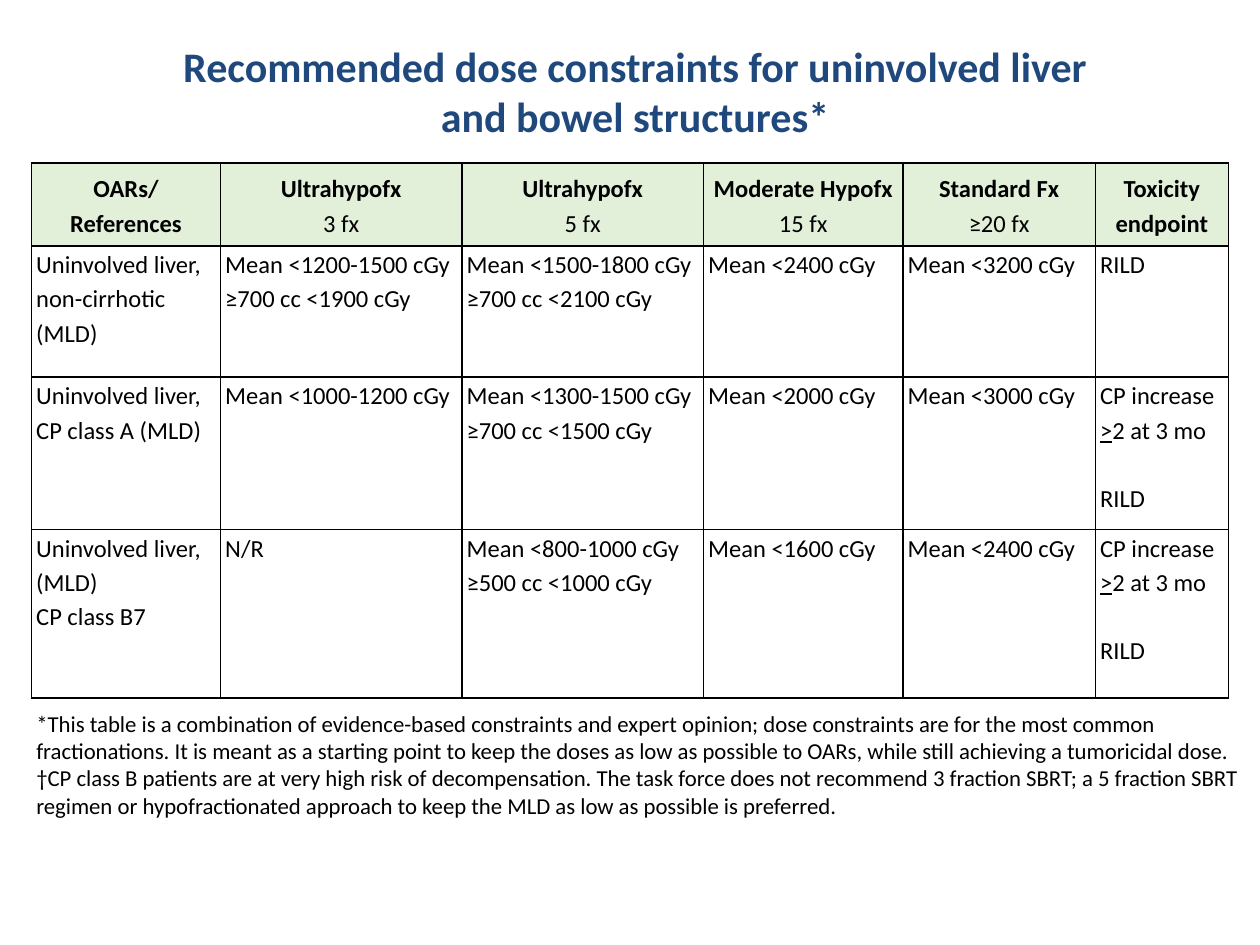
from lxml.etree import SubElement
from pptx import Presentation
from pptx.dml.color import RGBColor
from pptx.enum.text import MSO_ANCHOR, MSO_AUTO_SIZE, PP_ALIGN
from pptx.oxml.ns import qn
from pptx.util import Pt

NAVY = RGBColor(0x1F, 0x49, 0x7D)
GREEN = RGBColor(0xE2, 0xEF, 0xD9)
BLACK = RGBColor(0, 0, 0)
FONT = "Calibri"

TITLE = "Recommended dose constraints for uninvolved liver\vand bowel structures*"
HEADS = [
    ["OARs/", "References"],
    ["Ultrahypofx", "3 fx"],
    ["Ultrahypofx", "5 fx"],
    ["Moderate Hypofx", "15 fx"],
    ["Standard Fx", "≥20 fx"],
    ["Toxicity endpoint"],
]
RISK = [("CP increase ", ">", "2 at 3 mo"), "RILD"]
ROWS = [
    [["Uninvolved liver,", "non-cirrhotic (MLD)"],
     ["Mean <1200-1500 cGy", "≥700 cc <1900 cGy"],
     ["Mean <1500-1800 cGy", "≥700 cc <2100 cGy"],
     ["Mean <2400 cGy"], ["Mean <3200 cGy"], ["RILD"]],
    [["Uninvolved liver,", "CP class A (MLD)"],
     ["Mean <1000-1200 cGy"],
     ["Mean <1300-1500 cGy", "≥700 cc <1500 cGy"],
     ["Mean <2000 cGy"], ["Mean <3000 cGy"], RISK],
    [["Uninvolved liver, (MLD)", "CP class B7"],
     ["N/R"],
     ["Mean <800-1000 cGy", "≥500 cc <1000 cGy"],
     ["Mean <1600 cGy"], ["Mean <2400 cGy"], RISK],
]
NOTES = [
    "*This table is a combination of evidence-based constraints and expert opinion; "
    "dose constraints are for the most common fractionations. It is meant as a starting "
    "point to keep the doses as low as possible to OARs, while still achieving a "
    "tumoricidal dose.",
    "†CP class B patients are at very high risk of decompensation. The task force does "
    "not recommend 3 fraction SBRT; a 5 fraction SBRT regimen or hypofractionated "
    "approach to keep the MLD as low as possible is preferred.",
]
WIDTHS = [108, 138, 138, 114, 110, 76]
HEIGHTS = [47.5, 75, 87, 96.5]


def style(para, size, color=BLACK, bold=False):
    font = para.font
    font.name, font.size, font.bold = FONT, Pt(size), bold
    font.color.rgb = color


def paras(frame, count):
    return [frame.paragraphs[0]] + [frame.add_paragraph() for _ in range(count - 1)]


def border(cell):
    props = cell._tc.get_or_add_tcPr()
    for i, side in enumerate(("lnL", "lnR", "lnT", "lnB")):
        line = props.makeelement(qn("a:" + side), {"w": str(Pt(1))})
        fill = SubElement(line, qn("a:solidFill"))
        SubElement(fill, qn("a:srgbClr"), val=str(BLACK))
        props.insert(i, line)


def fill_cell(cell, lines, head):
    cell.margin_left = cell.margin_right = Pt(2.7)
    cell.margin_top = cell.margin_bottom = 0
    cell.vertical_anchor = MSO_ANCHOR.MIDDLE if head else MSO_ANCHOR.TOP
    if head:
        cell.fill.solid()
        cell.fill.fore_color.rgb = GREEN
    else:
        cell.fill.background()
    border(cell)
    for para, line in zip(paras(cell.text_frame, len(lines)), lines):
        para.line_spacing = 1.15
        para.alignment = PP_ALIGN.CENTER if head else PP_ALIGN.LEFT
        if lines is RISK and line == "RILD":
            para.space_before = Pt(19.6)
        for part in [line] if isinstance(line, str) else line:
            run = para.add_run()
            run.text = part
            if part == ">":
                run.font.underline = True
        style(para, 14, bold=head and "fx" not in line.split())


def main():
    deck = Presentation()
    deck.slide_width, deck.slide_height = Pt(720), Pt(540)
    slide = deck.slides.add_slide(deck.slide_layouts[5])

    title = slide.shapes.title
    title.left, title.top, title.width, title.height = Pt(30), Pt(18), Pt(666), Pt(54)
    frame = title.text_frame
    frame.text = TITLE
    frame.auto_size = MSO_AUTO_SIZE.NONE
    frame.vertical_anchor = MSO_ANCHOR.TOP
    frame.margin_top = Pt(5)
    frame.paragraphs[0].alignment = PP_ALIGN.CENTER
    style(frame.paragraphs[0], 24, NAVY, True)

    grid = slide.shapes.add_table(len(HEIGHTS), len(WIDTHS), Pt(18), Pt(93),
                                  Pt(sum(WIDTHS)), Pt(sum(HEIGHTS))).table
    grid.first_row = grid.horz_banding = False
    for col, width in zip(grid.columns, WIDTHS):
        col.width = Pt(width)
    for row, height, cells in zip(grid.rows, HEIGHTS, [HEADS] + ROWS):
        row.height = Pt(height)
        for cell, lines in zip(row.cells, cells):
            fill_cell(cell, lines, cells is HEADS)

    notes = slide.shapes.add_textbox(Pt(13.7), Pt(401.8), Pt(706), Pt(70.6)).text_frame
    notes.word_wrap = True
    for para, text in zip(paras(notes, len(NOTES)), NOTES):
        para.text = text
        style(para, 13)

    deck.save("out.pptx")


if __name__ == "__main__":
    main()
